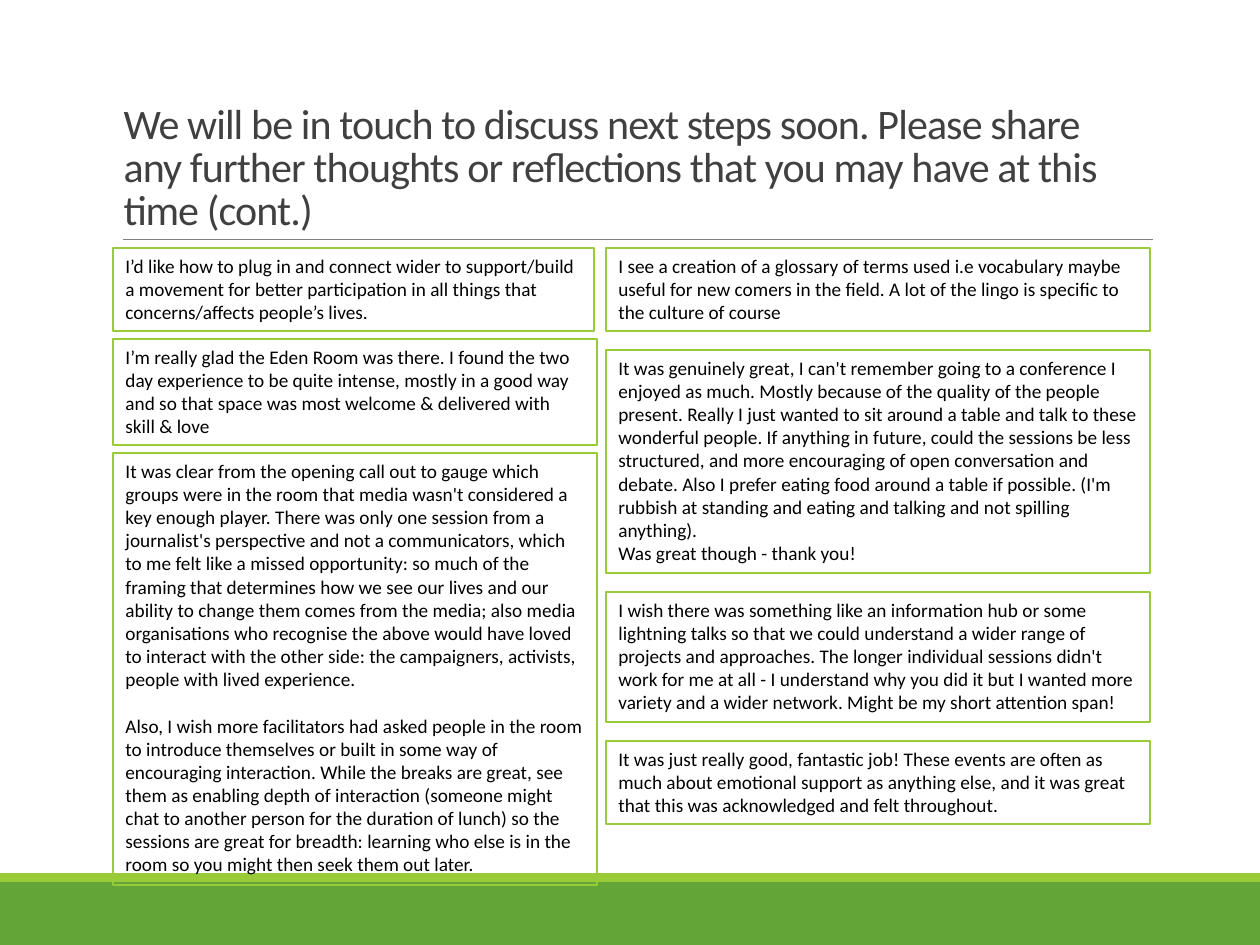
from pptx import Presentation
from pptx.dml.color import RGBColor
from pptx.enum.shapes import MSO_CONNECTOR, MSO_SHAPE
from pptx.enum.text import MSO_ANCHOR, MSO_AUTO_SIZE, PP_ALIGN
from pptx.oxml.ns import qn
from pptx.util import Inches, Pt
from lxml import etree

RECT = MSO_SHAPE.RECTANGLE
STRAIGHT = MSO_CONNECTOR.STRAIGHT
TOP, BOTTOM = MSO_ANCHOR.TOP, MSO_ANCHOR.BOTTOM
LEFT = PP_ALIGN.LEFT
GROW, FIXED = MSO_AUTO_SIZE.SHAPE_TO_FIT_TEXT, MSO_AUTO_SIZE.NONE

GREEN = RGBColor(0x63, 0xA5, 0x37)
LIME = RGBColor(0x99, 0xCB, 0x38)
GRAY = RGBColor(0x80, 0x80, 0x80)
DARK = RGBColor(0x40, 0x40, 0x40)
BLACK = RGBColor(0, 0, 0)

SCALE = Inches(1) / 126
WIDE, HIGH = 1260, 945
START = 248  # top of both columns

TITLE = ("We will be in touch to discuss next steps soon. Please share any further "
         "thoughts or reflections that you may have at this time (cont.)")

# Each quote: width, height, paragraphs, space between paragraphs in points
LEFT_QUOTES = [
    (481, 83, ["I’d like how to plug in and connect wider to support/build a movement for "
               "better participation in all things that concerns/affects people’s lives."], 0),
    (484, 106, ["I’m really glad the Eden Room was there. I found the two day experience to "
                "be quite intense, mostly in a good way and so that space was most welcome & "
                "delivered with skill & love"], 0),
    (484, 432, [
        "It was clear from the opening call out to gauge which groups were in the room that "
        "media wasn't considered a key enough player. There was only one session from a "
        "journalist's perspective and not a communicators, which to me felt like a missed "
        "opportunity: so much of the framing that determines how we see our lives and our "
        "ability to change them comes from the media; also media organisations who recognise "
        "the above would have loved to interact with the other side: the campaigners, "
        "activists, people with lived experience.",
        "Also, I wish more facilitators had asked people in the room to introduce themselves "
        "or built in some way of encouraging interaction. While the breaks are great, see "
        "them as enabling depth of interaction (someone might chat to another person for the "
        "duration of lunch) so the sessions are great for breadth: learning who else is in "
        "the room so you might then seek them out later."], 13.4),
]
RIGHT_QUOTES = [
    (544, 83, ["I see a creation of a glossary of terms used i.e vocabulary maybe useful for "
               "new comers in the field. A lot of the lingo is specific to the culture of "
               "course"], 0),
    (544, 223, [
        "It was genuinely great, I can't remember going to a conference I enjoyed as much. "
        "Mostly because of the quality of the people present. Really I just wanted to sit "
        "around a table and talk to these wonderful people. If anything in future, could the "
        "sessions be less structured, and more encouraging of open conversation and debate. "
        "Also I prefer eating food around a table if possible. (I'm rubbish at standing and "
        "eating and talking and not spilling anything).",
        "Was great though - thank you!"], 0),
    (544, 130, ["I wish there was something like an information hub or some lightning talks "
                "so that we could understand a wider range of projects and approaches. The "
                "longer individual sessions didn't work for me at all - I understand why you "
                "did it but I wanted more variety and a wider network. Might be my short "
                "attention span!"], 0),
    (544, 83, ["It was just really good, fantastic job! These events are often as much about "
               "emotional support as anything else, and it was great that this was "
               "acknowledged and felt throughout."], 0),
]


def px(n):
    return round(n * SCALE)


def apply(item, values):
    for key, value in values.items():
        setattr(item, key, value)


def style(par, size, color):
    par.alignment = LEFT
    for run in par.runs:
        apply(run.font, {"name": "Calibri", "size": Pt(size)})
        run.font.color.rgb = color


def add_bar(slide, top, height, color):
    bar = slide.shapes.add_shape(RECT, 0, px(top), px(WIDE), px(height))
    bar.shadow.inherit = False
    bar.fill.solid()
    bar.fill.fore_color.rgb = color
    bar.line.fill.background()


def add_rule(slide, x1, x2, y):
    rule = slide.shapes.add_connector(STRAIGHT, px(x1), px(y), px(x2), px(y))
    rule.line.color.rgb = GRAY
    rule.line.width = Pt(0.5)
    etree.SubElement(rule._element.spPr, qn("a:effectLst"))


def set_title(slide):
    title = slide.shapes.title
    apply(title, {"left": px(111), "top": px(40), "width": px(1040), "height": px(200)})
    frame = title.text_frame
    frame.text = TITLE
    apply(frame, {"word_wrap": True, "auto_size": FIXED, "vertical_anchor": BOTTOM})
    par = frame.paragraphs[0]
    par.line_spacing = 0.85
    style(par, 24, DARK)
    par.runs[0].font._element.set("spc", "-50")


def add_quote(slide, left, top, width, height, texts, space):
    box = slide.shapes.add_shape(RECT, px(left), px(top), px(width), px(height))
    box.shadow.inherit = False
    box.fill.background()
    box.line.color.rgb = LIME
    box.line.width = Pt(0.75)
    frame = box.text_frame
    apply(frame, {"word_wrap": True, "auto_size": GROW, "vertical_anchor": TOP})
    for i, text in enumerate(texts):
        par = frame.add_paragraph() if i else frame.paragraphs[0]
        par.add_run().text = text
        par.space_before = Pt(space if i else 0)
        style(par, 11, BLACK)


def add_column(slide, left, gap, quotes):
    top = START
    for width, height, texts, space in quotes:
        add_quote(slide, left, top, width, height, texts, space)
        top += height + gap


def main():
    deck = Presentation()
    deck.slide_width, deck.slide_height = px(WIDE), px(HIGH)
    slide = deck.slides.add_slide(deck.slide_layouts[5])

    # Footer bars and title rule
    add_bar(slide, 882, 63, GREEN)
    add_bar(slide, 873, 9, LIME)
    add_rule(slide, 123, 1153, 239)

    # Title and quotes
    set_title(slide)
    add_column(slide, 113, 8, LEFT_QUOTES)
    add_column(slide, 606, 19, RIGHT_QUOTES)
    deck.save("out.pptx")


if __name__ == "__main__":
    main()
